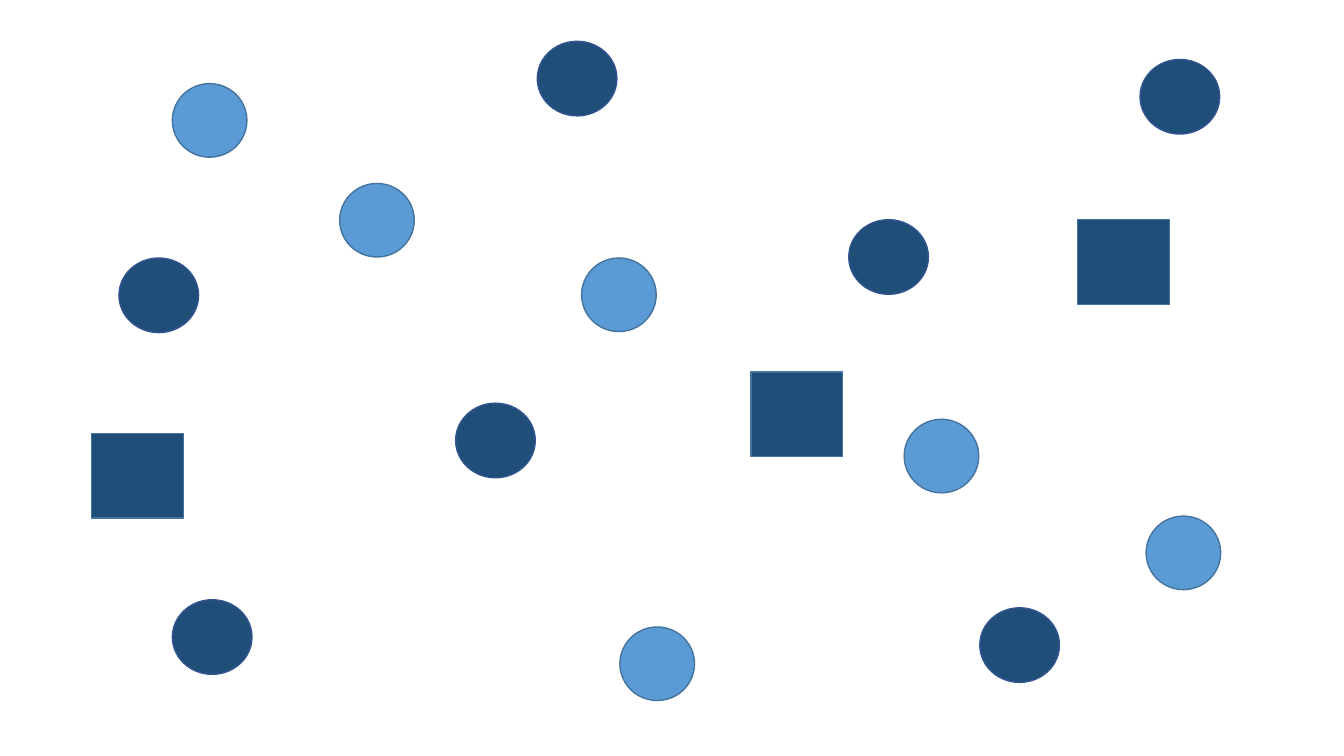
"""Build a slide of scattered dark circles, light circles and dark squares."""
from pptx import Presentation
from pptx.dml.color import RGBColor
from pptx.enum.shapes import MSO_SHAPE
from pptx.util import Inches, Pt

COLORS = {
    "navy": "1F4E79",
    "sky": "5B9BD5",
    "indigo edge": "325491",
    "steel edge": "43739E",
}
CELL = Inches(0.1)
COLUMNS, ROWS = 133.33, 75

deck = Presentation()
deck.slide_width = int(COLUMNS * CELL)
deck.slide_height = ROWS * CELL
slide = deck.slides.add_slide(deck.slide_layouts[6])

dark_circles = [(84.2, 21.8), (97.2, 60.3), (113.1, 5.9), (11.8, 25.6),
                (17.1, 59.5), (45.2, 40), (53.3, 4.1)]
light_circles = [(89.7, 41.6), (57.7, 25.6), (17.1, 8.3),
                 (113.7, 51.2), (61.5, 62.2), (33.7, 18.2)]
dark_squares = [(9.1, 43), (74.5, 36.9), (106.9, 21.8)]

families = [
    (MSO_SHAPE.OVAL, (7.9, 7.4), "navy", "indigo edge", dark_circles),
    (MSO_SHAPE.OVAL, (7.4, 7.3), "sky", "steel edge", light_circles),
    (MSO_SHAPE.RECTANGLE, (9.1, 8.4), "navy", "steel edge", dark_squares),
]

for outline, size, inside, edge, corners in families:
    for corner in corners:
        mark = slide.shapes.add_shape(
            outline, *(int(cells * CELL) for cells in corner + size))
        mark.shadow.inherit = False
        mark.fill.solid()
        mark.fill.fore_color.rgb = RGBColor.from_string(COLORS[inside])
        mark.line.color.rgb = RGBColor.from_string(COLORS[edge])
        mark.line.width = Pt(1)

deck.save("out.pptx")
